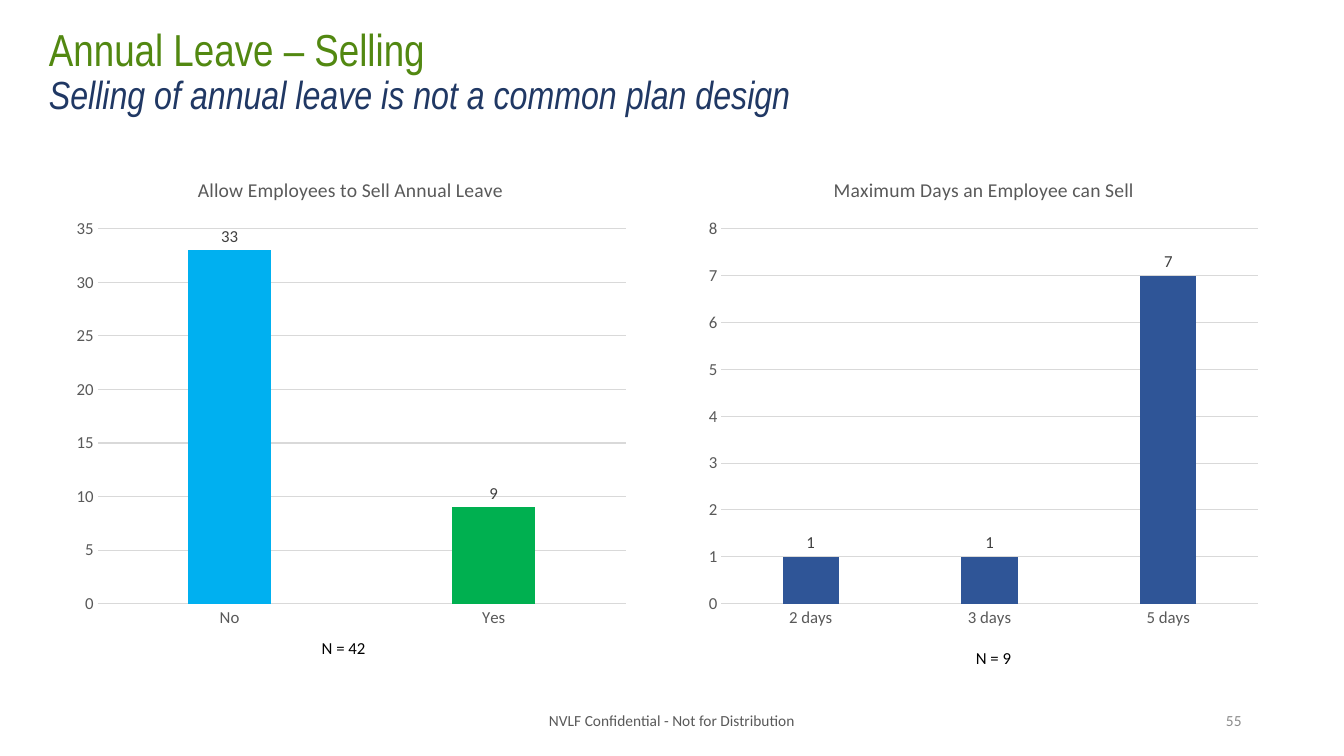
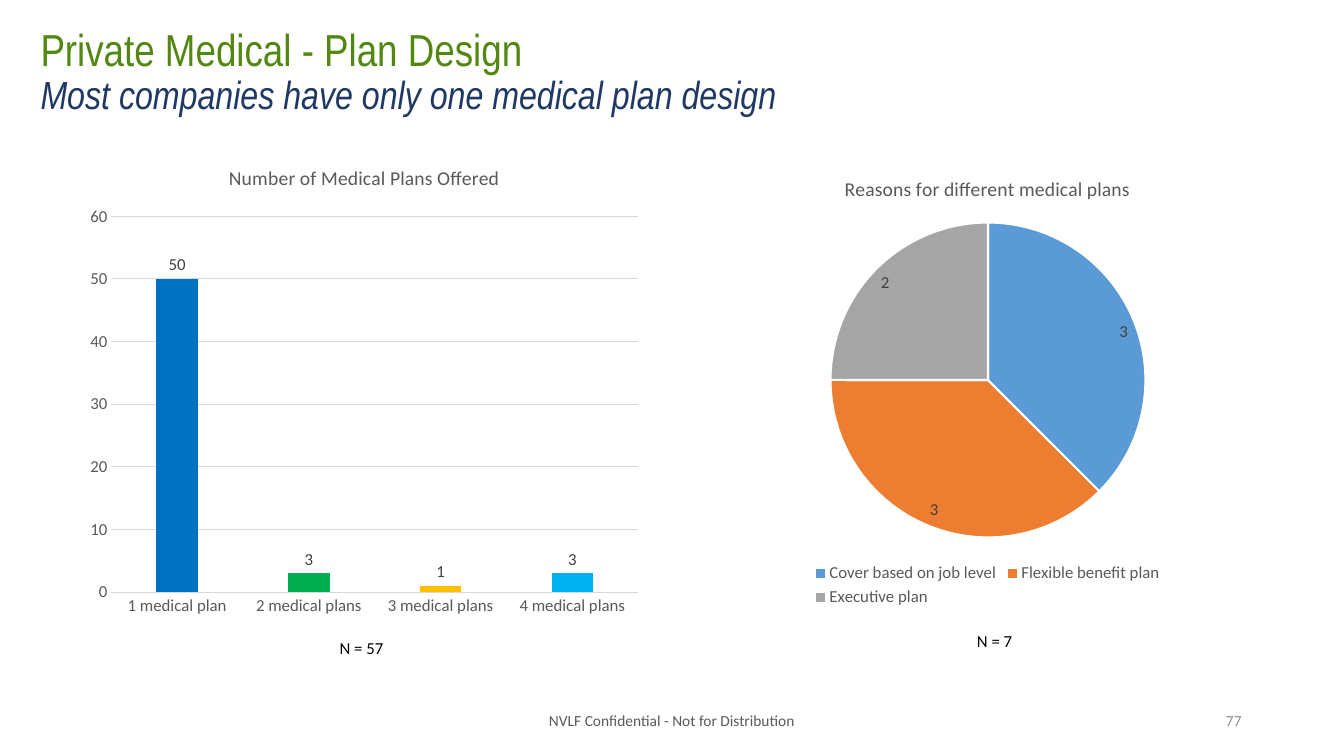
from dataclasses import dataclass
from typing import NamedTuple

import pptx
import pptx.chart.data
import pptx.dml.color
import pptx.enum.chart
import pptx.enum.text
import pptx.oxml
import pptx.oxml.ns
import pptx.util

EMU_PER_PX = 9525
TITLE_ONLY_LAYOUT = 5
ALIGN = pptx.enum.text.PP_ALIGN
ANCHOR = pptx.enum.text.MSO_ANCHOR


@dataclass(frozen=True)
class Theme:
    title_font: str = "Arial Narrow"
    body_font: str = "Calibri"
    title_size: int = 32
    subtitle_size: int = 28
    chart_title_size: int = 14
    body_size: int = 12
    footer_size: int = 11
    title: str = "528811"
    subtitle: str = "203864"
    text: str = "000000"
    muted: str = "595959"
    label: str = "404040"
    page_number: str = "8C8C8C"
    grid: str = "D9D9D9"
    white: str = "FFFFFF"
    blue: str = "5B9BD5"
    navy: str = "2F5597"
    deep_blue: str = "0070C0"
    sky: str = "00B0F0"
    green: str = "00B050"
    gold: str = "FFC000"
    orange: str = "ED7D31"
    gray: str = "A5A5A5"


THEME = Theme()


class Box(NamedTuple):
    left: int
    top: int
    width: int
    height: int

    def emu(self) -> list[int]:
        return [length * EMU_PER_PX for length in self]


class Slice(NamedTuple):
    category: str
    value: int
    color: str


@dataclass(frozen=True)
class ChartPanel:
    """A chart, its plot area relative to the chart, and its sample-size note."""
    title: str
    box: Box
    plot: Box
    slices: list[Slice]
    note: str
    note_box: Box
    axis_max: int = 0
    axis_step: int = 0
    is_pie: bool = False


@dataclass(frozen=True)
class Page:
    number: int
    title: str
    subtitle: str
    title_left: int
    panels: list[ChartPanel]


FOOTER = "NVLF Confidential - Not for Distribution"
FOOTER_BOX = Box(424, 667, 432, 38)
NUMBER_BOX = Box(904, 667, 288, 38)

PAGES = [
    Page(55, "Annual Leave – Selling",
         "Selling of annual leave is not a common plan design", 37, [
             ChartPanel("Allow Employees to Sell Annual Leave",
                        Box(62, 150, 544, 457), Box(31, 68, 503, 357),
                        [Slice("No", 33, THEME.sky), Slice("Yes", 9, THEME.green)],
                        "N = 42", Box(297, 603, 75, 29), 35, 5),
             ChartPanel("Maximum Days an Employee can Sell",
                        Box(665, 150, 544, 457), Box(22, 68, 511, 357),
                        [Slice("2 days", 1, THEME.navy),
                         Slice("3 days", 1, THEME.navy),
                         Slice("5 days", 7, THEME.navy)],
                        "N = 9", Box(920, 612, 75, 29), 8, 1),
         ]),
    Page(77, "Private Medical - Plan Design",
         "Most companies have only one medical plan design", 29, [
             ChartPanel("Reasons for different medical plans",
                        Box(688, 150, 505, 432), Box(103, 62, 300, 300),
                        [Slice("Cover based on job level", 3, THEME.blue),
                         Slice("Flexible benefit plan", 3, THEME.orange),
                         Slice("Executive plan", 2, THEME.gray)],
                        "N = 7", Box(921, 596, 64, 29), is_pie=True),
             ChartPanel("Number of Medical Plans Offered",
                        Box(75, 139, 544, 457), Box(31, 67, 502, 358),
                        [Slice("1 medical plan", 50, THEME.deep_blue),
                         Slice("2 medical plans", 3, THEME.green),
                         Slice("3 medical plans", 1, THEME.gold),
                         Slice("4 medical plans", 3, THEME.sky)],
                        "N = 57", Box(314, 603, 64, 29), 60, 10),
         ]),
]


def rgb(color: str) -> pptx.dml.color.RGBColor:
    return pptx.dml.color.RGBColor.from_string(color)


def style_font(font, size: int, color: str, name: str = THEME.body_font) -> None:
    font.name = name
    font.size = pptx.util.Pt(size)
    font.color.rgb = rgb(color)


def style_line(line, color: str, width: float) -> None:
    line.color.rgb = rgb(color)
    line.width = pptx.util.Pt(width)


def add_text(slide, box: Box, text: str, size: int, color: str,
             align: ALIGN = ALIGN.LEFT, anchor: ANCHOR = ANCHOR.TOP) -> None:
    frame = slide.shapes.add_textbox(*box.emu()).text_frame
    frame.word_wrap = True
    frame.vertical_anchor = anchor
    para = frame.paragraphs[0]
    para.text = text
    para.alignment = align
    style_font(para.font, size, color)


def fill_title(slide, page: Page) -> None:
    holder = slide.shapes.title
    box = Box(page.title_left, 0, 1104, 139)
    holder.left, holder.top, holder.width, holder.height = box.emu()
    frame = holder.text_frame
    frame.auto_size = pptx.enum.text.MSO_AUTO_SIZE.NONE
    frame.vertical_anchor = ANCHOR.MIDDLE
    para = frame.paragraphs[0]
    para.alignment = ALIGN.LEFT
    para.line_spacing = 0.9
    heading = para.add_run()
    heading.text = page.title
    style_font(heading.font, THEME.title_size, THEME.title, THEME.title_font)
    para.add_line_break()
    tagline = para.add_run()
    tagline.text = page.subtitle
    style_font(tagline.font, THEME.subtitle_size, THEME.subtitle, THEME.title_font)
    tagline.font.italic = True


def place_plot(chart, panel: ChartPanel) -> None:
    """Fix the inner plot area as fractions of the chart frame."""
    qn = pptx.oxml.ns.qn
    area = chart.element.find(".//" + qn("c:plotArea"))
    for old in area.findall(qn("c:layout")):
        area.remove(old)
    fractions = {
        "x": panel.plot.left / panel.box.width,
        "y": panel.plot.top / panel.box.height,
        "w": panel.plot.width / panel.box.width,
        "h": panel.plot.height / panel.box.height,
    }
    values = "".join(f'<c:{key} val="{part:.4f}"/>' for key, part in fractions.items())
    area.insert(0, pptx.oxml.parse_xml(
        f'<c:layout {pptx.oxml.ns.nsdecls("c")}><c:manualLayout>'
        '<c:layoutTarget val="inner"/><c:xMode val="edge"/><c:yMode val="edge"/>'
        f'{values}</c:manualLayout></c:layout>'))


def style_axes(chart, panel: ChartPanel) -> None:
    for axis in (chart.category_axis, chart.value_axis):
        axis.major_tick_mark = pptx.enum.chart.XL_TICK_MARK.NONE
        axis.minor_tick_mark = pptx.enum.chart.XL_TICK_MARK.NONE
        style_font(axis.tick_labels.font, THEME.body_size, THEME.muted)
    style_line(chart.category_axis.format.line, THEME.grid, 0.75)
    value_axis = chart.value_axis
    value_axis.format.line.fill.background()
    value_axis.minimum_scale = 0
    value_axis.maximum_scale = panel.axis_max
    value_axis.major_unit = panel.axis_step
    value_axis.has_major_gridlines = True
    style_line(value_axis.major_gridlines.format.line, THEME.grid, 0.75)


def add_chart_panel(slide, panel: ChartPanel) -> None:
    data = pptx.chart.data.CategoryChartData()
    data.categories = [item.category for item in panel.slices]
    data.add_series("Series 1", [item.value for item in panel.slices])
    kinds = pptx.enum.chart.XL_CHART_TYPE
    kind = kinds.PIE if panel.is_pie else kinds.COLUMN_CLUSTERED
    chart = slide.shapes.add_chart(kind, *panel.box.emu(), data).chart
    style_font(chart.font, THEME.body_size, THEME.text)

    chart.has_title = True
    para = chart.chart_title.text_frame.paragraphs[0]
    para.text = panel.title
    style_font(para.font, THEME.chart_title_size, THEME.muted)
    para.font.bold = False

    chart.has_legend = panel.is_pie
    plot = chart.plots[0]
    plot.vary_by_categories = panel.is_pie
    positions = pptx.enum.chart.XL_LABEL_POSITION
    if panel.is_pie:
        chart.legend.position = pptx.enum.chart.XL_LEGEND_POSITION.BOTTOM
        chart.legend.include_in_layout = False
        style_font(chart.legend.font, THEME.body_size, THEME.muted)
    else:
        plot.gap_width = 219
        plot.overlap = -27
        style_axes(chart, panel)

    series = plot.series[0]
    for index, item in enumerate(panel.slices):
        look = series.points[index].format
        look.fill.solid()
        look.fill.fore_color.rgb = rgb(item.color)
        if panel.is_pie:
            style_line(look.line, THEME.white, 1.5)
    labels = series.data_labels
    labels.show_value = True
    labels.position = positions.INSIDE_END if panel.is_pie else positions.OUTSIDE_END
    style_font(labels.font, THEME.body_size, THEME.label)
    place_plot(chart, panel)

    add_text(slide, panel.note_box, panel.note, THEME.body_size, THEME.text)


def add_page(deck, page: Page) -> None:
    slide = deck.slides.add_slide(deck.slide_layouts[TITLE_ONLY_LAYOUT])
    fill_title(slide, page)
    add_text(slide, FOOTER_BOX, FOOTER, THEME.footer_size, THEME.muted,
             ALIGN.CENTER, ANCHOR.MIDDLE)
    add_text(slide, NUMBER_BOX, str(page.number), THEME.footer_size,
             THEME.page_number, ALIGN.RIGHT, ANCHOR.MIDDLE)
    for panel in page.panels:
        add_chart_panel(slide, panel)


def main() -> None:
    deck = pptx.Presentation()
    deck.slide_width = 1280 * EMU_PER_PX
    deck.slide_height = 720 * EMU_PER_PX
    for page in PAGES:
        add_page(deck, page)
    deck.save("out.pptx")


if __name__ == "__main__":
    main()
